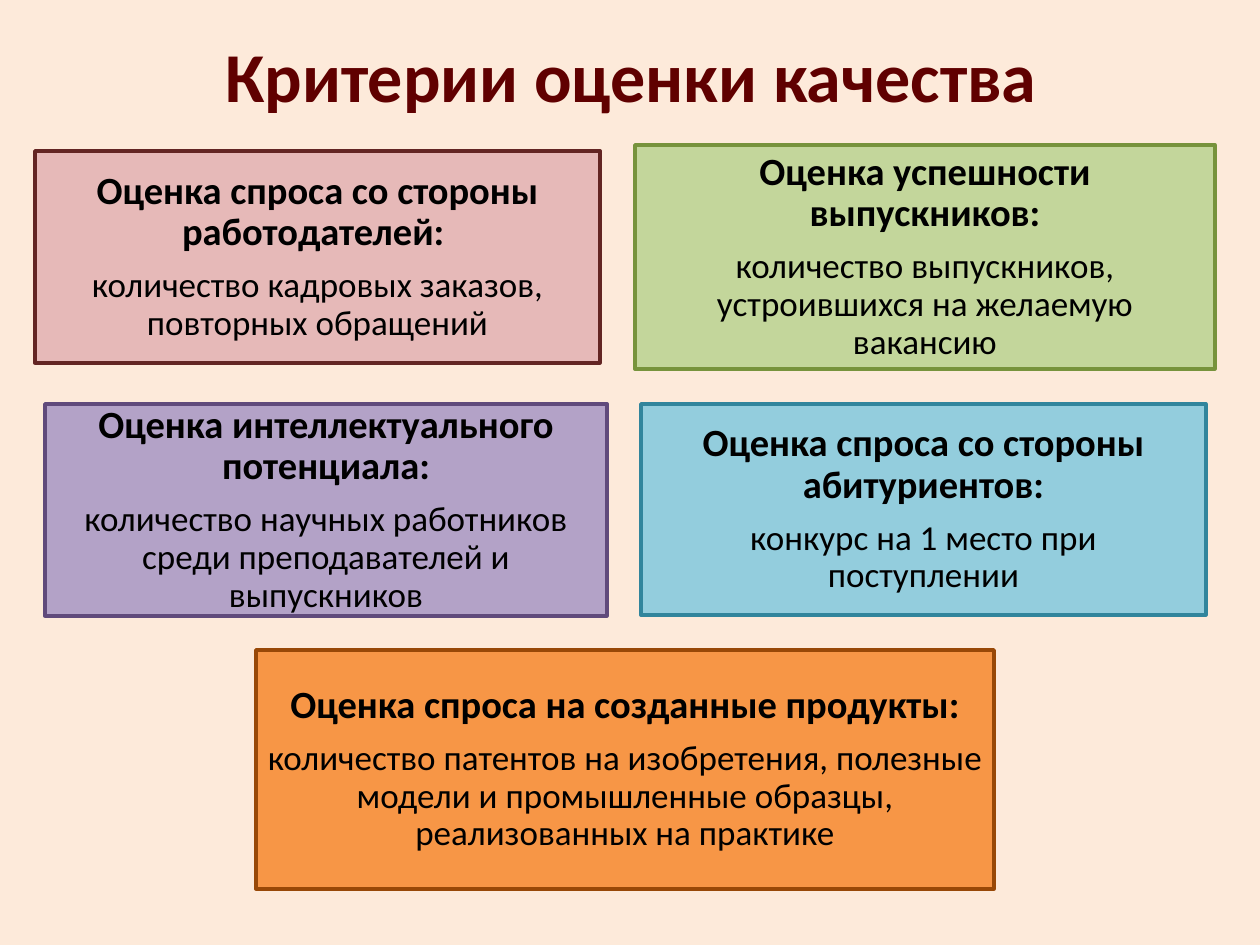
"""Builds a slide with five coloured boxes of quality assessment criteria."""
from pptx import Presentation
from pptx.dml.color import RGBColor
from pptx.enum.shapes import MSO_SHAPE
from pptx.enum.text import MSO_ANCHOR, PP_ALIGN
from pptx.util import Emu, Pt

RECT = MSO_SHAPE.RECTANGLE
MIDDLE = MSO_ANCHOR.MIDDLE
CENTER = PP_ALIGN.CENTER

PX = 914400 // 126
FONT = "Calibri"
INSET = 11
COLORS = {
    "background": "FDEADA", "title": "600000", "text": "000000",
    "rose": "E6B9B8", "rose_line": "632523",
    "green": "C3D69B", "green_line": "77933C",
    "violet": "B3A2C7", "violet_line": "604A7B",
    "blue": "93CDDD", "blue_line": "31859C",
    "orange": "F79646", "orange_line": "984807",
}

TITLE = "Критерии оценки качества"
TITLE_BOX = (64, -4, 1134, 158)
CRITERIA = [
    ("rose", (35, 151, 565, 212), "Оценка спроса со стороны работодателей: ",
     "количество кадровых заказов, повторных обращений"),
    ("green", (635, 145, 580, 224), "Оценка успешности выпускников:",
     "количество выпускников, устроившихся на желаемую вакансию"),
    ("violet", (45, 404, 562, 212), "Оценка интеллектуального потенциала:",
     "количество научных работников среди преподавателей и выпускников"),
    ("blue", (641, 404, 565, 211), "Оценка спроса со стороны абитуриентов:",
     "конкурс на 1 место при поступлении"),
    ("orange", (256, 650, 738, 239), "Оценка спроса на созданные продукты:",
     "количество патентов на изобретения, полезные модели и промышленные "
     "образцы, реализованных на практике"),
]


def px(n):
    return Emu(n * PX)


def rgb(name):
    return RGBColor.from_string(COLORS[name])


def add_run(p, text, size, color, bold):
    p.alignment = CENTER
    r = p.add_run()
    r.text = text
    r.font.name = FONT
    r.font.size = Pt(size)
    r.font.bold = bold
    r.font.color.rgb = rgb(color)


def add_title(s):
    sp = s.shapes.title
    sp.left, sp.top, sp.width, sp.height = map(px, TITLE_BOX)
    tf = sp.text_frame
    tf.vertical_anchor = MIDDLE
    add_run(tf.paragraphs[0], TITLE, 40, "title", True)


def add_criterion(s, color, box, heading, detail):
    sp = s.shapes.add_shape(RECT, *map(px, box))
    sp.shadow.inherit = False
    sp.fill.solid()
    sp.fill.fore_color.rgb = rgb(color)
    sp.line.color.rgb = rgb(color + "_line")
    sp.line.width = Pt(2)
    tf = sp.text_frame
    tf.word_wrap = True
    tf.vertical_anchor = MIDDLE
    tf.margin_left = tf.margin_right = px(INSET)
    tf.margin_top = tf.margin_bottom = px(INSET)
    add_run(tf.paragraphs[0], heading, 22, "text", True)
    add_run(tf.add_paragraph(), detail, 20, "text", False)
    for p in tf.paragraphs:
        p.line_spacing = 0.9
        p.space_after = Pt(7.5)


def main():
    prs = Presentation()
    prs.slide_width, prs.slide_height = px(1260), px(945)
    s = prs.slides.add_slide(prs.slide_layouts[5])
    s.background.fill.solid()
    s.background.fill.fore_color.rgb = rgb("background")
    add_title(s)
    for criterion in CRITERIA:
        add_criterion(s, *criterion)
    prs.save("out.pptx")


if __name__ == "__main__":
    main()
